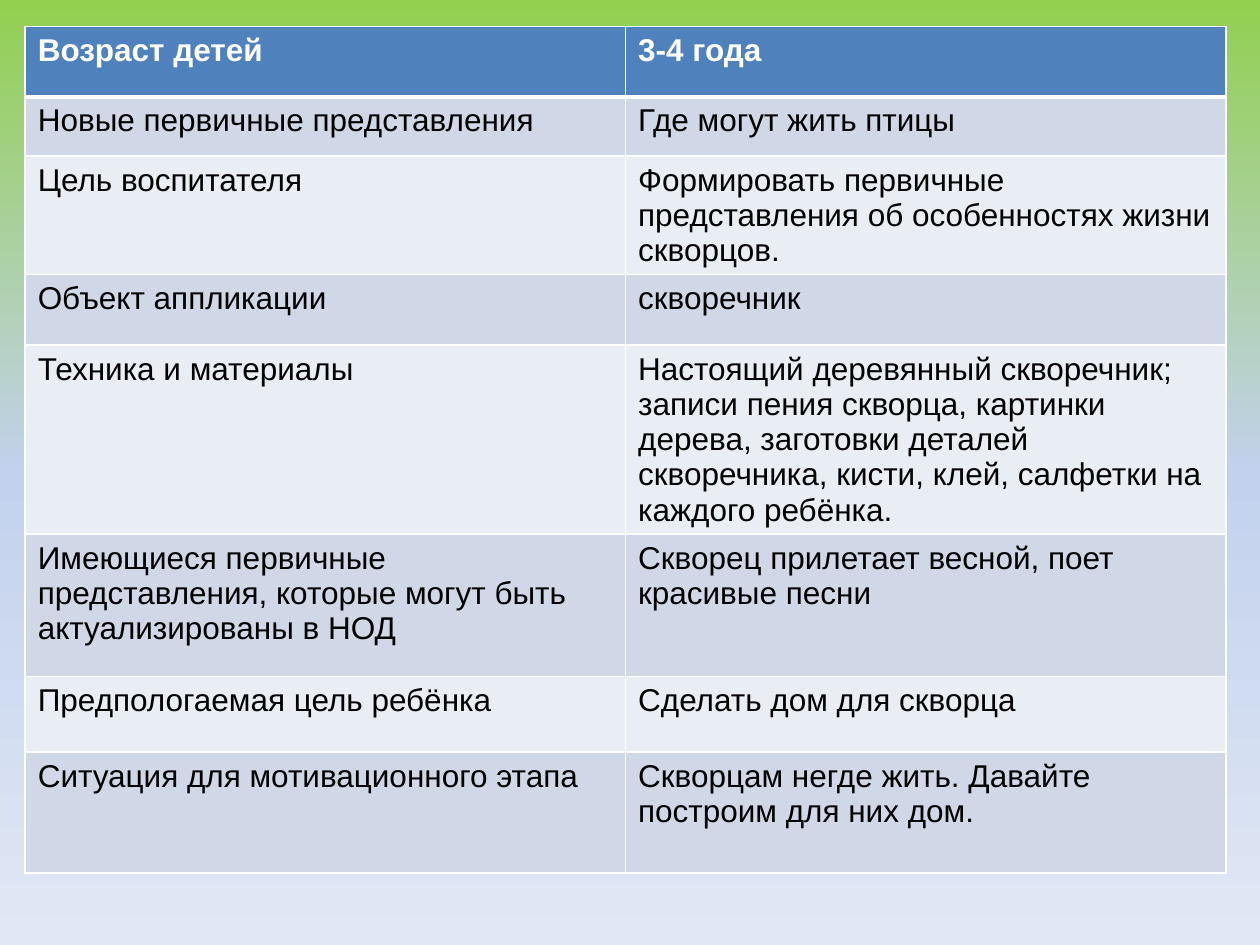
from copy import deepcopy

from lxml import etree
from pptx import Presentation, util as u
from pptx.dml.color import RGBColor
from pptx.oxml import ns

WHITE = RGBColor(0xFF, 0xFF, 0xFF)
BLACK = RGBColor(0, 0, 0)
HEADER_BLUE = RGBColor(0x4F, 0x81, 0xBD)
BAND_DARK = RGBColor(0xD0, 0xD8, 0xE8)
BAND_LIGHT = RGBColor(0xE9, 0xED, 0xF4)
SKY = (
    (0, RGBColor(0x92, 0xD0, 0x50)),
    (0.5, RGBColor(0xC2, 0xD1, 0xED)),
    (1, RGBColor(0xE1, 0xE8, 0xF5)),
)

BODY_FONT = {"name": "Arial", "size": u.Pt(18), "bold": False}
HEADER_FONT = BODY_FONT | {"bold": True}
THIN, THICK = 1, 3

LESSON_PLAN = (
    (0.56, "Возраст детей", "3-4 года"),
    (0.47, "Новые первичные представления", "Где могут жить птицы"),
    (0.56, "Цель воспитателя",
     "Формировать первичные представления об особенностях жизни скворцов."),
    (0.56, "Объект аппликации", "скворечник"),
    (0.56, "Техника и материалы",
     "Настоящий деревянный скворечник; записи пения скворца, картинки дерева, "
     "заготовки деталей скворечника, кисти, клей, салфетки на каждого ребёнка."),
    (1.13, "Имеющиеся первичные представления, которые могут быть актуализированы в НОД",
     "Скворец прилетает весной, поет красивые песни"),
    (0.6, "Предпологаемая цель ребёнка", "Сделать дом для скворца"),
    (0.96, "Ситуация для мотивационного этапа",
     "Скворцам негде жить. Давайте построим для них дом."),
)


def paint_background(slide):
    fill = slide.background.fill
    fill.gradient()
    fill.gradient_angle = 270
    stop_list = slide.element.find(".//" + ns.qn("a:gsLst"))
    stop_list.insert(1, deepcopy(stop_list[0]))
    for stop, (position, color) in zip(fill.gradient_stops, SKY):
        stop.position = position
        stop.color.rgb = color


def draw_borders(cell, widths):
    properties = cell._tc.get_or_add_tcPr()
    for side, width in widths.items():
        line = etree.SubElement(properties, ns.qn(f"a:ln{side}"), w=str(u.Pt(width)))
        solid = etree.SubElement(line, ns.qn("a:solidFill"))
        etree.SubElement(solid, ns.qn("a:srgbClr"), val=str(WHITE))


def fill_cell(cell, wording, row_index):
    is_header = row_index == 0
    draw_borders(cell, {
        "L": THIN,
        "R": THIN,
        "T": THICK if row_index == 1 else THIN,
        "B": THICK if is_header else THIN,
    })
    band = BAND_DARK if row_index % 2 else BAND_LIGHT
    cell.fill.solid()
    cell.fill.fore_color.rgb = HEADER_BLUE if is_header else band
    paragraph = cell.text_frame.paragraphs[0]
    run = paragraph.add_run()
    run.text = wording
    for attribute, value in (HEADER_FONT if is_header else BODY_FONT).items():
        setattr(run.font, attribute, value)
    run.font.color.rgb = WHITE if is_header else BLACK


def add_lesson_table(slide, left, top, width):
    height = u.Inches(sum(row[0] for row in LESSON_PLAN))
    plan = slide.shapes.add_table(len(LESSON_PLAN), 2, left, top, width, height).table
    for row_index, (row_height, *wordings) in enumerate(LESSON_PLAN):
        plan.rows[row_index].height = u.Inches(row_height)
        for column_index, wording in enumerate(wordings):
            fill_cell(plan.cell(row_index, column_index), wording, row_index)


def main():
    deck = Presentation()
    deck.slide_width, deck.slide_height = u.Inches(10), u.Inches(7.5)
    slide = deck.slides.add_slide(deck.slide_layouts[6])
    paint_background(slide)
    add_lesson_table(slide, u.Inches(0.2), u.Inches(0.21), u.Inches(9.53))
    deck.save("out.pptx")


if __name__ == "__main__":
    main()
